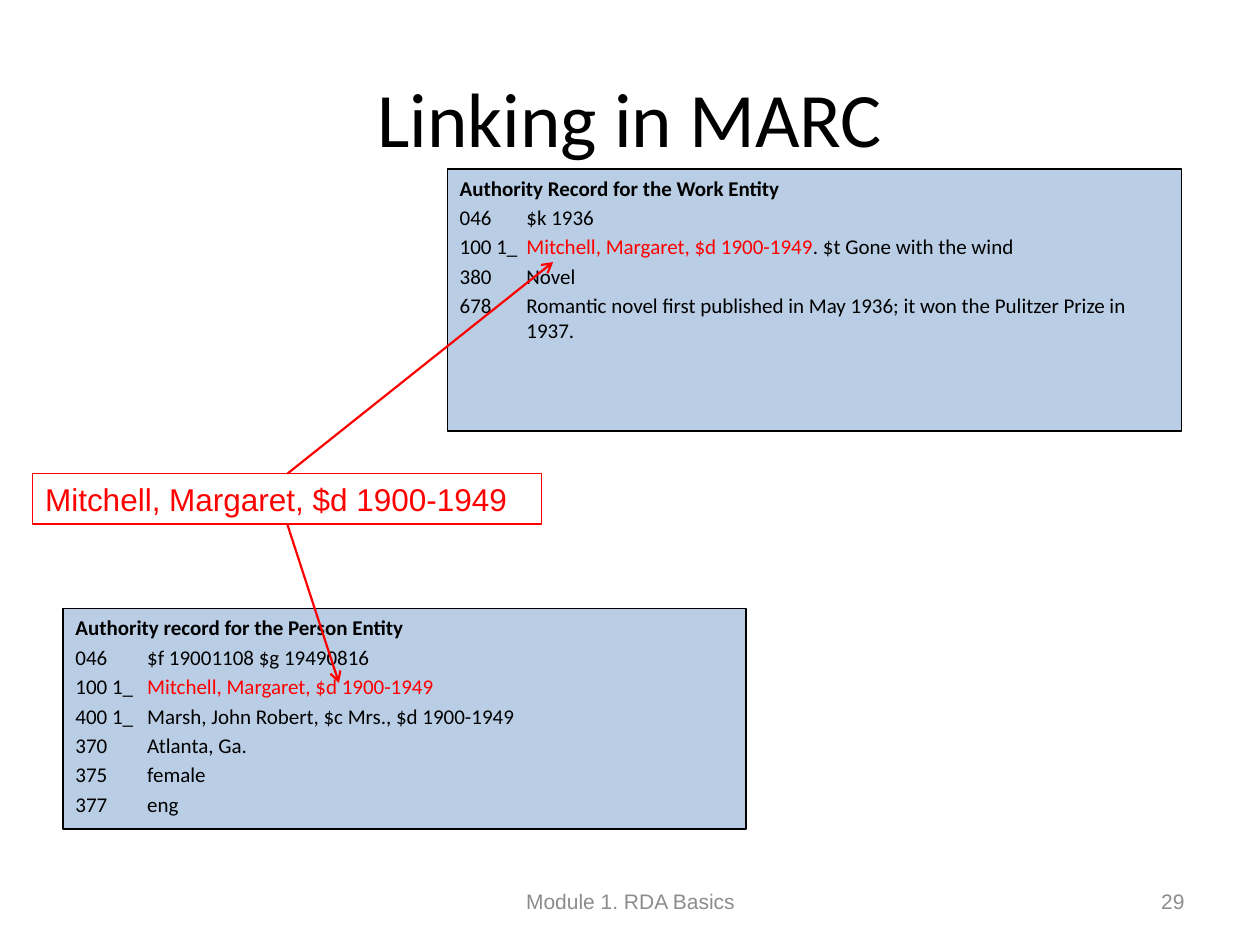
import pptx
import pptx.dml.color
import pptx.enum.shapes
import pptx.enum.text
import pptx.util
import lxml.etree
from pptx.oxml.ns import qn

COLORS = {"ink": "000000", "link": "FF0000", "record": "B9CDE5", "footer": "8C8C8C"}
ALIGN = pptx.enum.text.PP_ALIGN
ANCHOR = pptx.enum.text.MSO_ANCHOR
RECTANGLE = pptx.enum.shapes.MSO_SHAPE.RECTANGLE

deck = pptx.Presentation()
deck.slide_width, deck.slide_height = pptx.util.Inches(10), pptx.util.Inches(7.5)
slide = deck.slides.add_slide(deck.slide_layouts[5])

# Grid of 100 columns by 75 rows
COL, ROW = deck.slide_width / 100, deck.slide_height / 75


def cells(left, top, width, height):
    return int(left * COL), int(top * ROW), int(width * COL), int(height * ROW)


def write(paragraph, text, color, **font):
    run = paragraph.add_run()
    run.text = text
    run.font.color.rgb = pptx.dml.color.RGBColor.from_string(COLORS[color])
    for name, value in font.items():
        setattr(run.font, name, value)


# Title
title = slide.shapes.title
title.left, title.top, title.width, title.height = cells(5, 3, 90, 12.5)
title.text_frame.vertical_anchor = ANCHOR.MIDDLE
title.text_frame.paragraphs[0].alignment = ALIGN.CENTER
write(title.text_frame.paragraphs[0], "Linking in MARC", "ink",
      name="Calibri", size=pptx.util.Pt(44))

# Authority records: place, column where values start, heading, fields;
# the linked heading is a part of its own
heading_link = "Mitchell, Margaret, $d 1900-1949"
records = [
    (cells(35.5, 13.4, 58.3, 20.8), 5.3, "Authority Record for the Work Entity", [
        ("046", "$k 1936"),
        ("100 1_", heading_link, ". $t Gone with the wind"),
        ("380", "Novel"),
        ("678", "Romantic novel first published in May 1936; "
                "it won the Pulitzer Prize in 1937."),
    ]),
    (cells(5, 48.3, 54.2, 17.5), 5.7, "Authority record for the Person Entity", [
        ("046", "$f 19001108 $g 19490816"),
        ("100 1_", heading_link),
        ("400 1_", "Marsh, John Robert, $c Mrs., $d 1900-1949"),
        ("370", "Atlanta, Ga."),
        ("375", "female"),
        ("377", "eng"),
    ]),
]
for place, value_column, heading, fields in records:
    record = slide.shapes.add_shape(RECTANGLE, *place)
    record.shadow.inherit = False
    record.fill.solid()
    record.fill.fore_color.rgb = pptx.dml.color.RGBColor.from_string(COLORS["record"])
    record.line.color.rgb = pptx.dml.color.RGBColor.from_string(COLORS["ink"])
    record.line.width = pptx.util.Pt(0.75)
    frame = record.text_frame
    frame.word_wrap, frame.vertical_anchor = True, ANCHOR.TOP

    text_font = {"name": "Calibri", "size": pptx.util.Pt(12)}
    paragraph = frame.paragraphs[0]
    paragraph.alignment = ALIGN.LEFT
    write(paragraph, heading, "ink", bold=True, **text_font)
    for tag, *parts in fields:
        paragraph = frame.add_paragraph()
        paragraph.alignment = ALIGN.LEFT
        paragraph.space_before = pptx.util.Pt(2.4)
        # Hanging indent: the tab after the tag leads to the value column
        indent = int(value_column * COL)
        properties = paragraph._p.get_or_add_pPr()
        properties.set("marL", str(indent))
        properties.set("indent", str(-indent))
        write(paragraph, tag + "\t", "ink", **text_font)
        for part in parts:
            write(paragraph, part, "link" if part == heading_link else "ink", **text_font)

# Footer and slide number
for text, place, alignment in [
    ("Module 1. RDA Basics", cells(34.2, 69.5, 31.7, 4), ALIGN.CENTER),
    ("29", cells(71.7, 69.5, 23.3, 4), ALIGN.RIGHT),
]:
    footer = slide.shapes.add_textbox(*place)
    footer.text_frame.word_wrap = True
    footer.text_frame.vertical_anchor = ANCHOR.MIDDLE
    footer.text_frame.paragraphs[0].alignment = alignment
    write(footer.text_frame.paragraphs[0], text, "footer",
          name="Arial", size=pptx.util.Pt(12))

# Shared heading that links both records
shared = slide.shapes.add_shape(RECTANGLE, *cells(2.6, 37.6, 40.4, 4))
shared.shadow.inherit = False
shared.fill.background()
shared.line.color.rgb = pptx.dml.color.RGBColor.from_string(COLORS["link"])
shared.line.width = pptx.util.Pt(0.75)
shared_format = {
    "word_wrap": False,
    "vertical_anchor": ANCHOR.TOP,
    "auto_size": pptx.enum.text.MSO_AUTO_SIZE.SHAPE_TO_FIT_TEXT,
}
for name, value in shared_format.items():
    setattr(shared.text_frame, name, value)
shared.text_frame.paragraphs[0].alignment = ALIGN.LEFT
write(shared.text_frame.paragraphs[0], heading_link, "link",
      name="Arial", size=pptx.util.Pt(18))

# Arrows from the shared heading (top 0, bottom 2) to each record's 100 field
for side, column, row in [(0, 43.9, 20.8), (2, 26.9, 54.2)]:
    arrow = slide.shapes.add_connector(
        pptx.enum.shapes.MSO_CONNECTOR.STRAIGHT, 0, 0, int(column * COL), int(row * ROW))
    arrow.begin_connect(shared, side)
    arrow.line.color.rgb = pptx.dml.color.RGBColor.from_string(COLORS["link"])
    arrow.line.width = pptx.util.Pt(1.25)
    lxml.etree.SubElement(arrow.line._get_or_add_ln(), qn("a:tailEnd"), type="arrow")
    lxml.etree.SubElement(arrow._element.spPr, qn("a:effectLst"))

deck.save("out.pptx")
